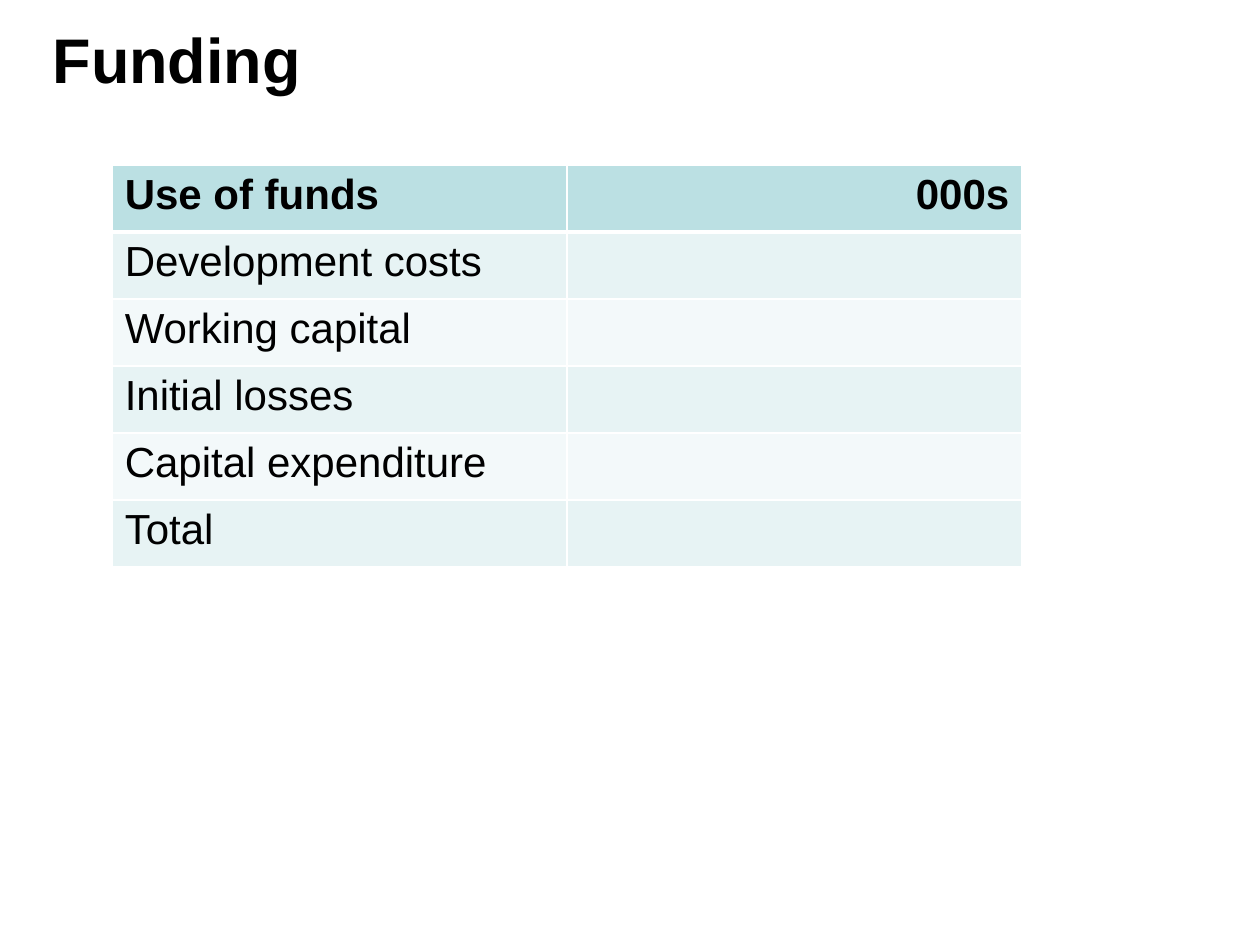
from lxml.etree import SubElement
from pptx import Presentation
from pptx.dml.color import RGBColor
from pptx.enum.text import MSO_ANCHOR, PP_ALIGN
from pptx.oxml.ns import qn
from pptx.util import Inches, Pt

COLORS = {"text": "000000", "border": "FFFFFF", "header": "BBE0E3",
          "band": "E7F3F4", "light": "F3F9FA"}
TITLE_FORMAT = {"name": "Arial", "size": Pt(36), "bold": True}
HEADER_FORMAT = {"name": "Arial", "size": Pt(24), "bold": True}
BODY_FORMAT = {"name": "Arial", "size": Pt(24), "bold": False}
ROWS = [("Use of funds", "000s"), ("Development costs", ""),
        ("Working capital", ""), ("Initial losses", ""),
        ("Capital expenditure", ""), ("Total", "")]


def set_text(p, text, fmt, align=PP_ALIGN.LEFT):
    """Write formatted text into a paragraph."""
    p.alignment = align
    for name, value in fmt.items():
        setattr(p.font, name, value)
    p.font.color.rgb = RGBColor.from_string(COLORS["text"])
    if text:
        r = p.add_run()
        r.text = text
        for name, value in fmt.items():
            setattr(r.font, name, value)
        r.font.color.rgb = RGBColor.from_string(COLORS["text"])


def add_title(s, text):
    """Add the slide title."""
    sp = s.shapes.add_textbox(Inches(0.32), Inches(0.2), Inches(8.5), Inches(0.52))
    tf = sp.text_frame
    tf.word_wrap = True
    tf.vertical_anchor = MSO_ANCHOR.MIDDLE
    set_text(tf.paragraphs[0], text, TITLE_FORMAT)


def set_borders(cell, widths):
    """Draw the cell borders, given widths in points by side."""
    tc_pr = cell._tc.get_or_add_tcPr()
    for i, (side, width) in enumerate(widths.items()):
        ln = tc_pr.makeelement(qn(f"a:ln{side}"), {"w": str(Pt(width))})
        tc_pr.insert(i, ln)
        fill = SubElement(ln, qn("a:solidFill"))
        SubElement(fill, qn("a:srgbClr"), val=COLORS["border"])


def add_funds_table(s, rows):
    """Add the banded table of the use of funds."""
    height = 0.532
    table = s.shapes.add_table(len(rows), 2, Inches(0.89), Inches(1.31),
                               Inches(7.22), Inches(height * len(rows))).table
    for i, row in enumerate(rows):
        table.rows[i].height = Inches(height)
        fmt = BODY_FORMAT if i else HEADER_FORMAT
        color = ("band" if i % 2 else "light") if i else "header"
        widths = {"L": 1, "R": 1, "T": 3 if i == 1 else 1, "B": 1 if i else 3}
        for j, text in enumerate(row):
            cell = table.cell(i, j)
            cell.fill.solid()
            cell.fill.fore_color.rgb = RGBColor.from_string(COLORS[color])
            set_borders(cell, widths)
            align = PP_ALIGN.RIGHT if j else PP_ALIGN.LEFT
            set_text(cell.text_frame.paragraphs[0], text, fmt, align)


def main():
    """Build and save the funding slide."""
    prs = Presentation()
    prs.slide_width, prs.slide_height = Inches(10), Inches(7.5)
    s = prs.slides.add_slide(prs.slide_layouts[6])
    add_title(s, "Funding")
    add_funds_table(s, ROWS)
    prs.save("out.pptx")


if __name__ == "__main__":
    main()
